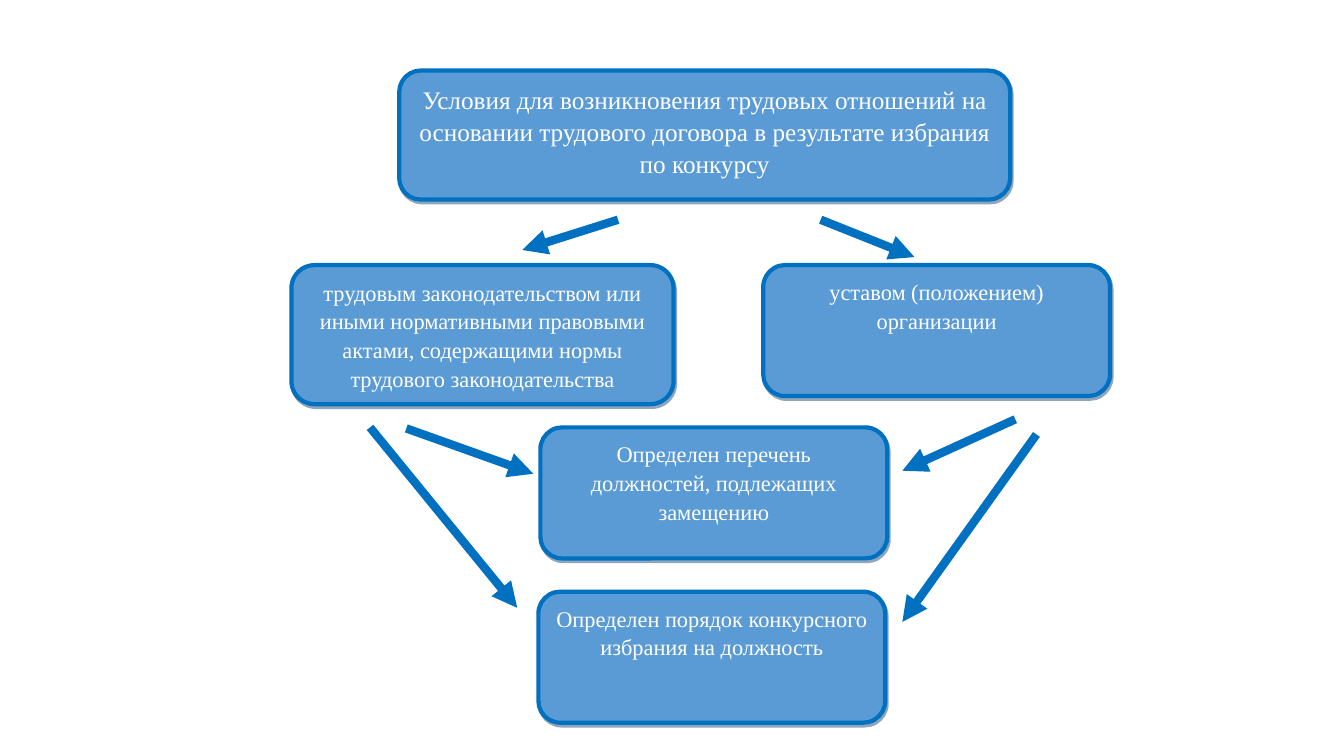
from lxml.etree import SubElement
from pptx import Presentation
from pptx.dml.color import RGBColor
from pptx.enum.shapes import MSO_CONNECTOR as Connector, MSO_SHAPE as Shape
from pptx.enum.text import MSO_ANCHOR as Anchor, PP_ALIGN as Align
from pptx.oxml.ns import qn
from pptx.util import Inches, Pt

FONT = "Times New Roman"
BOX_FILL, ACCENT, SHADOW, WHITE = "5B9BD5", "0070C0", "1F4D78", "FFFFFF"
SMALL_BOX = (3.44, 1.3)

# Conditions: text, (left, top), (width, height), text size
CONDITIONS = [
    ("Условия для возникновения трудовых отношений на основании трудового "
     "договора в результате избрания по конкурсу", (3.96, 0.7), (6.06, 1.28), 18),
    ("Определен перечень должностей, подлежащих замещению",
     (5.36, 4.24), SMALL_BOX, 16),
    ("Определен порядок конкурсного избрания на должность",
     (5.34, 5.87), SMALL_BOX, 16),
    ("уставом (положением) организации", (7.57, 2.63), SMALL_BOX, 16),
    ("трудовым законодательством или иными нормативными правовыми актами, "
     "содержащими нормы трудового законодательства", (2.89, 2.63), (3.79, 1.38), 16),
]

# Arrows: start, end
ARROWS = [
    ((6.13, 2.18), (5.18, 2.48)),
    ((8.14, 2.18), (9.07, 2.55)),
    ((4.03, 4.25), (5.29, 4.7)),
    ((3.67, 4.24), (5.13, 6.03)),
    ((10.07, 4.16), (8.95, 4.67)),
    ((10.28, 4.31), (8.95, 6.17)),
]


def color(hex_value):
    return RGBColor.from_string(hex_value)


def style_line(line, width):
    line.color.rgb = color(ACCENT)
    line.width = Pt(width)


def add_shadow(box):
    box.shadow.inherit = False
    effects = box._element.spPr.find(qn("a:effectLst"))
    shadow = SubElement(effects, qn("a:outerShdw"), blurRad="0",
                        dist=str(Pt(2.2)), dir=str(63 * 60000),
                        algn="ctr", rotWithShape="0")
    tint = SubElement(shadow, qn("a:srgbClr"), val=SHADOW)
    SubElement(tint, qn("a:alpha"), val="50000")


def add_condition(slide, text, corner, size, text_size):
    box = slide.shapes.add_shape(Shape.ROUNDED_RECTANGLE,
                                 *map(Inches, corner + size))
    box.fill.solid()
    box.fill.fore_color.rgb = color(BOX_FILL)
    style_line(box.line, 3)
    add_shadow(box)
    frame = box.text_frame
    frame.word_wrap = True
    frame.vertical_anchor = Anchor.TOP
    frame.text = text
    paragraph = frame.paragraphs[0]
    paragraph.alignment = Align.CENTER
    paragraph.line_spacing = 1.07
    font = paragraph.runs[0].font
    font.name, font.size = FONT, Pt(text_size)
    font.color.rgb = color(WHITE)


def add_arrow(slide, start, end):
    arrow = slide.shapes.add_connector(Connector.STRAIGHT,
                                       *map(Inches, start + end))
    style_line(arrow.line, 6)
    SubElement(arrow.line._get_or_add_ln(), qn("a:tailEnd"), type="triangle")
    SubElement(arrow._element.spPr, qn("a:effectLst"))


def main():
    deck = Presentation()
    deck.slide_width, deck.slide_height = Inches(13.33), Inches(7.5)
    slide = deck.slides.add_slide(deck.slide_layouts[6])
    for condition in CONDITIONS:
        add_condition(slide, *condition)
    for arrow in ARROWS:
        add_arrow(slide, *arrow)
    deck.save("out.pptx")


if __name__ == "__main__":
    main()
